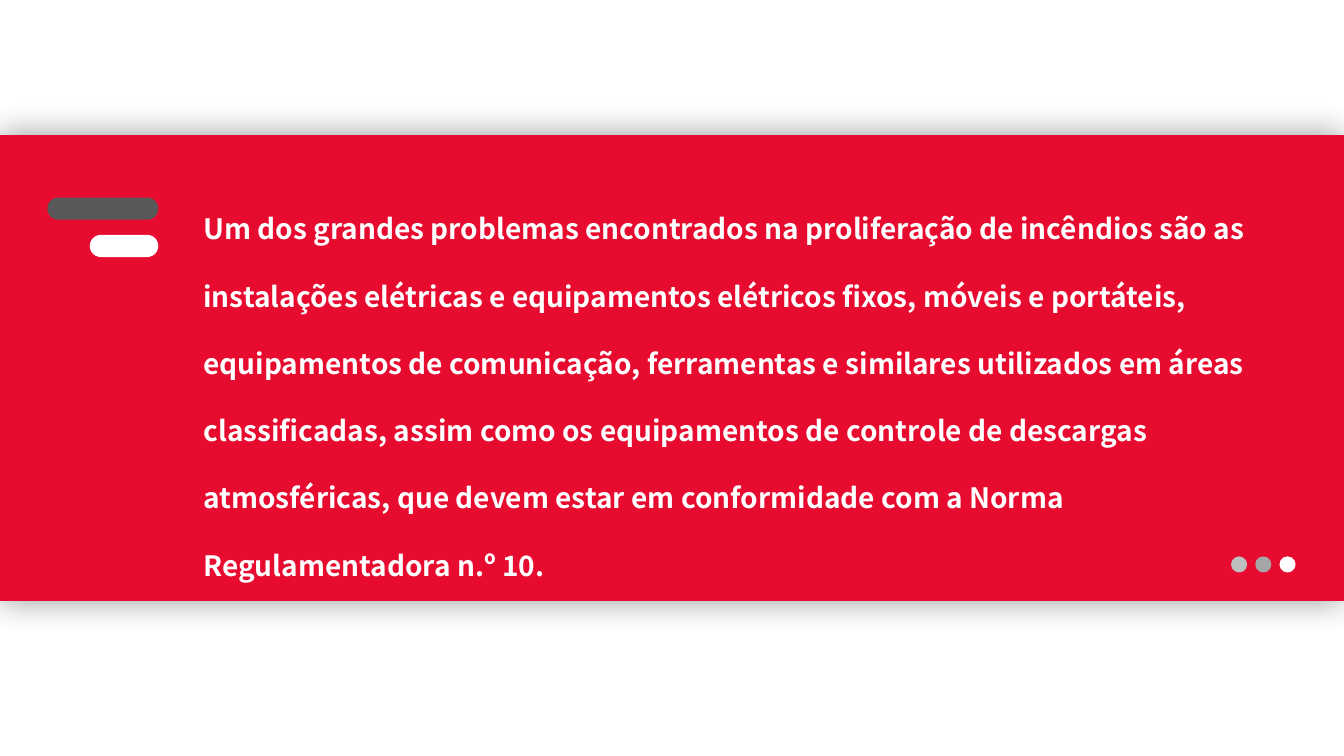
import pptx
import pptx.util
import pptx.dml.color
import pptx.enum.shapes
import pptx.enum.text
from lxml import etree

Inches = pptx.util.Inches
SHAPE = pptx.enum.shapes.MSO_SHAPE
NS = "http://schemas.openxmlformats.org/drawingml/2006/main"

COLORS = {
    "red": "E60B2F",
    "white": "FFFFFF",
    "light": "BFBFBF",
    "gray": "A6A6A6",
    "dark": "595959",
    "black": "000000",
}
TEXT = (
    "Um dos grandes problemas encontrados na proliferação de incêndios são as "
    "instalações elétricas e equipamentos elétricos fixos, móveis e portáteis, "
    "equipamentos de comunicação, ferramentas e similares utilizados em áreas "
    "classificadas, assim como os equipamentos de controle de descargas "
    "atmosféricas, que devem estar em conformidade com a Norma "
    "Regulamentadora n.º 10."
)
FONT = {"name": "Noto Sans CJK SC", "size": pptx.util.Pt(20), "bold": True}
DOTS = ["light", "gray", "white"]
DOT_LEFT, DOT_TOP, DOT_SIZE, DOT_STEP = 12.21, 5.52, 0.16, 0.24
BARS = [("dark", 1.1, 1.96), ("white", 0.68, 2.33)]
BAR_RIGHT, BAR_HEIGHT = 1.57, 0.22


def rgb(color):
    return pptx.dml.color.RGBColor.from_string(COLORS[color])


def add_block(shapes, kind, box, color):
    s = shapes.add_shape(kind, *map(Inches, box))
    s.shadow.inherit = False
    s.fill.solid()
    s.fill.fore_color.rgb = rgb(color)
    s.line.fill.background()
    return s


def add_glow_shadow(s, blur, alpha):
    effects = s._element.spPr.find(f"{{{NS}}}effectLst")
    shadow = etree.SubElement(
        effects, f"{{{NS}}}outerShdw", blurRad=str(pptx.util.Pt(blur)),
        dist="0", dir="0", algn="ctr", rotWithShape="0")
    tint = etree.SubElement(shadow, f"{{{NS}}}srgbClr", val=COLORS["black"])
    etree.SubElement(tint, f"{{{NS}}}alpha", val=str(alpha * 1000))


def add_body(shapes):
    tf = shapes.add_textbox(*map(Inches, (1.92, 1.72, 11.07, 4.04))).text_frame
    tf.word_wrap = True
    tf.auto_size = pptx.enum.text.MSO_AUTO_SIZE.SHAPE_TO_FIT_TEXT
    p = tf.paragraphs[0]
    p.line_spacing = 2.0
    r = p.add_run()
    r.text = TEXT
    for key, value in FONT.items():
        setattr(r.font, key, value)
    r.font.color.rgb = rgb("white")


def main():
    prs = pptx.Presentation()
    prs.slide_width, prs.slide_height = Inches(13.33), Inches(7.5)
    shapes = prs.slides.add_slide(prs.slide_layouts[6]).shapes

    band = add_block(shapes, SHAPE.RECTANGLE, (0, 1.34, 13.33, 4.62), "red")
    add_glow_shadow(band, 24, 40)

    dots = shapes.add_group_shape()
    for i, color in enumerate(DOTS):
        box = (DOT_LEFT + i * DOT_STEP, DOT_TOP, DOT_SIZE, DOT_SIZE)
        add_block(dots.shapes, SHAPE.OVAL, box, color)

    add_body(shapes)

    bars = shapes.add_group_shape()
    for color, width, top in BARS:
        box = (BAR_RIGHT - width, top, width, BAR_HEIGHT)
        s = add_block(bars.shapes, SHAPE.ROUNDED_RECTANGLE, box, color)
        s.adjustments[0] = 0.5

    prs.save("out.pptx")


if __name__ == "__main__":
    main()
